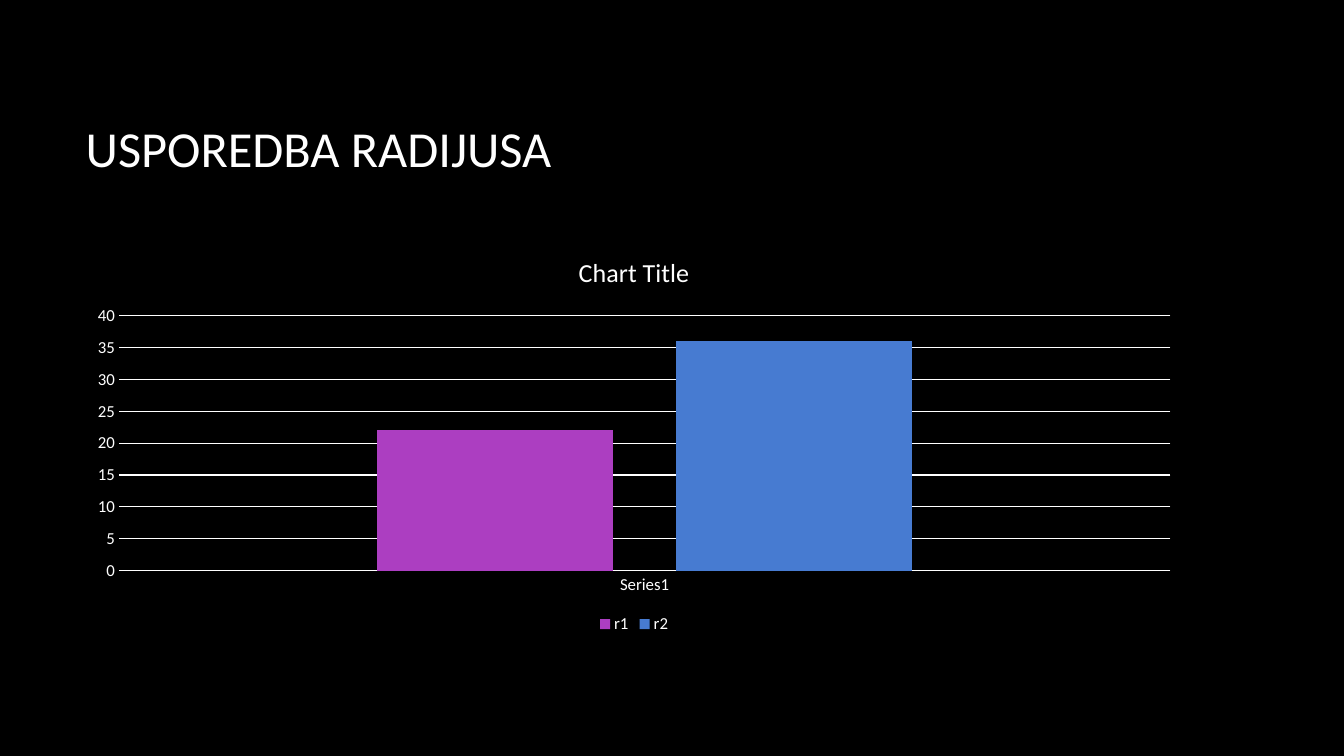
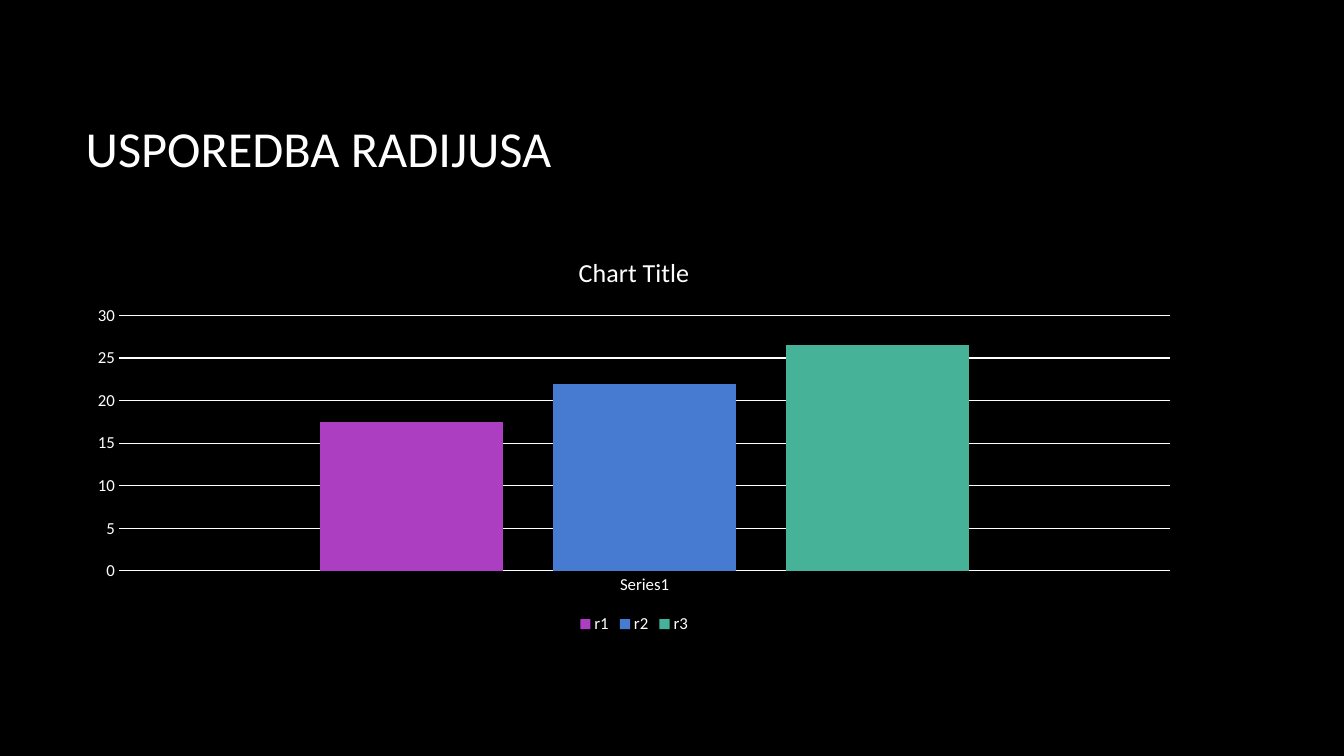
from pptx import Presentation
from pptx.chart.data import CategoryChartData
from pptx.dml.color import RGBColor
from pptx.enum import chart as ch, text as tx
from pptx.util import Inches, Pt

BLACK = RGBColor(0x00, 0x00, 0x00)
WHITE = RGBColor(0xFF, 0xFF, 0xFF)
PURPLE = RGBColor(0xAC, 0x3E, 0xC1)
BLUE = RGBColor(0x47, 0x7B, 0xD1)
GREEN = RGBColor(0x46, 0xB2, 0x98)
BARS = [PURPLE, BLUE, GREEN]

LEFT, WIDTH = Inches(0.75), Inches(11.08)
FRAME = {"left": LEFT, "top": Inches(0.67), "width": WIDTH, "height": Inches(1.59)}
RADII = [[22, 36], [17.5, 22, 26.5]]


def style(font, size):
    form = {"name": "Calibri", "size": Pt(size), "bold": False}
    for key, val in form.items():
        setattr(font, key, val)
    font.color.rgb = WHITE


def rule(line):
    line.color.rgb = WHITE
    line.width = Pt(0.75)


prs = Presentation()
prs.slide_width, prs.slide_height = Inches(13.33), Inches(7.5)
back = prs.slide_master.background.fill
back.solid()
back.fore_color.rgb = BLACK

for radii in RADII:
    slide = prs.slides.add_slide(prs.slide_layouts[5])
    title = slide.shapes.title
    for key, val in FRAME.items():
        setattr(title, key, val)
    title.text_frame.text = "USPOREDBA RADIJUSA"
    title.text_frame.vertical_anchor = tx.MSO_ANCHOR.MIDDLE
    head = title.text_frame.paragraphs[0]
    head.alignment = tx.PP_ALIGN.LEFT
    style(head.font, 36)

    data = CategoryChartData()
    data.categories = ["Series1"]
    for num, val in enumerate(radii, 1):
        data.add_series(f"r{num}", [val])
    chart = slide.shapes.add_chart(
        ch.XL_CHART_TYPE.COLUMN_CLUSTERED,
        LEFT, Inches(2.34), WIDTH, Inches(3.99), data).chart
    style(chart.font, 10)

    chart.has_title = True
    label = chart.chart_title.text_frame
    label.text = "Chart Title"
    style(label.paragraphs[0].runs[0].font, 18.6)
    chart.chart_title.include_in_layout = False

    chart.has_legend = True
    chart.legend.position = ch.XL_LEGEND_POSITION.BOTTOM
    chart.legend.include_in_layout = False
    style(chart.legend.font, 12)

    for axis in (chart.category_axis, chart.value_axis):
        axis.major_tick_mark = ch.XL_TICK_MARK.NONE
        axis.minor_tick_mark = ch.XL_TICK_MARK.NONE
        style(axis.tick_labels.font, 12)
    rule(chart.category_axis.format.line)
    chart.value_axis.format.line.fill.background()
    chart.value_axis.has_major_gridlines = True
    rule(chart.value_axis.major_gridlines.format.line)

    plot = chart.plots[0]
    plot.vary_by_categories = False
    plot.gap_width, plot.overlap = 219, -27
    for bar, color in zip(plot.series, BARS):
        bar.format.fill.solid()
        bar.format.fill.fore_color.rgb = color

prs.save("out.pptx")
